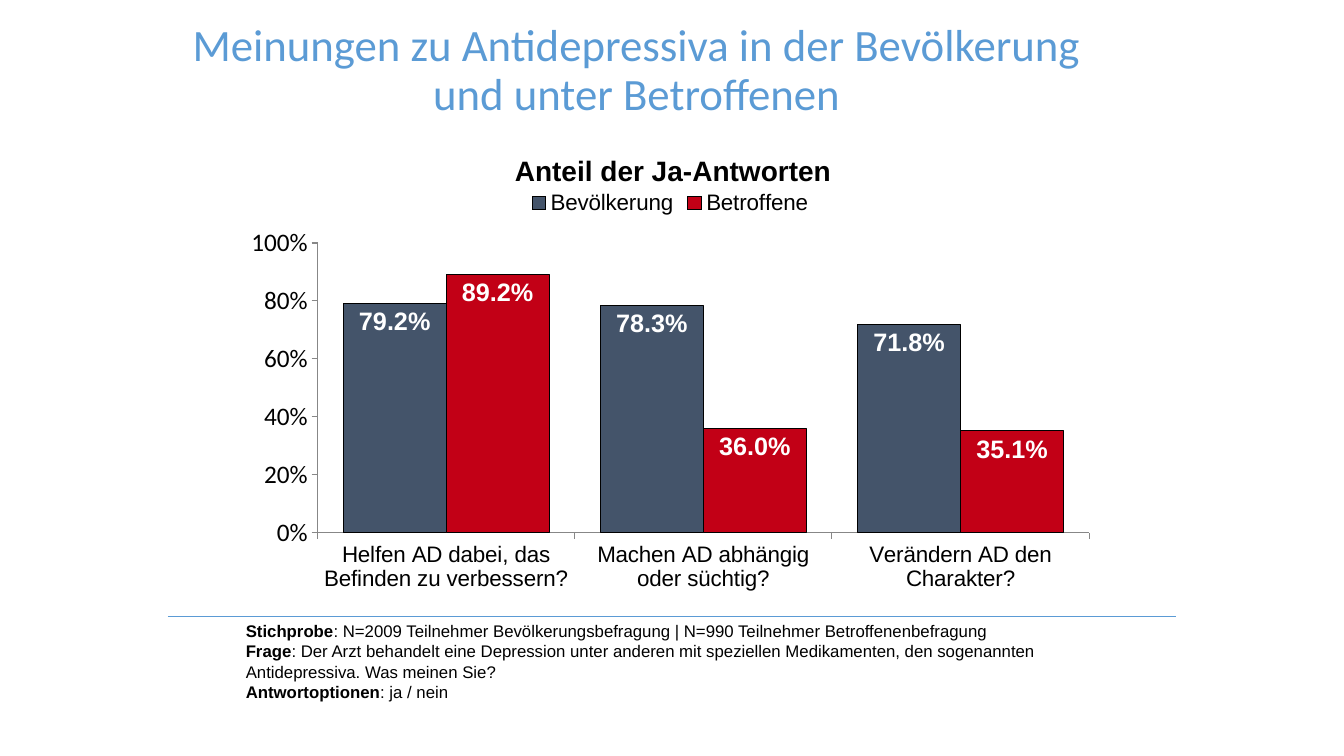
from lxml import etree
from pptx import Presentation
from pptx.chart.data import CategoryChartData
from pptx.dml.color import RGBColor
from pptx.enum.chart import (XL_CHART_TYPE, XL_LABEL_POSITION,
                             XL_LEGEND_POSITION, XL_TICK_MARK)
from pptx.enum.shapes import MSO_CONNECTOR
from pptx.enum.text import PP_ALIGN
from pptx.oxml import parse_xml
from pptx.oxml.ns import nsdecls, qn
from pptx.util import Pt

COLORS = {
    "accent": "5B9BD5",
    "text": "000000",
    "label": "FFFFFF",
    "axis": "878787",
    "population": "44546A",
    "patients": "C20016",
}
CATEGORIES = [
    "Helfen AD dabei, das Befinden zu verbessern?",
    "Machen AD abhängig oder süchtig?",
    "Verändern AD den Charakter?",
]
SERIES = [
    ("Bevölkerung", "population", (0.792, 0.783, 0.718)),
    ("Betroffene", "patients", (0.892, 0.36, 0.351)),
]
NOTES = [
    ("Stichprobe", ": N=2009 Teilnehmer Bevölkerungsbefragung | "
                   "N=990 Teilnehmer Betroffenenbefragung"),
    ("Frage", ": Der Arzt behandelt eine Depression unter anderen mit speziellen "
              "Medikamenten, den sogenannten Antidepressiva. Was meinen Sie?"),
    ("Antwortoptionen", ": ja / nein"),
]
# Inner plot area as fractions of the chart box
PLOT_AREA = {"x": 0.096, "y": 0.152, "w": 0.884, "h": 0.69}


def color(name):
    return RGBColor.from_string(COLORS[name])


def set_font(font, name, size, color_name="text", bold=False):
    font.name = name
    font.size = Pt(size)
    font.bold = bold
    font.color.rgb = color(color_name)


def add_text_frame(slide, left, top, width, height):
    box = slide.shapes.add_textbox(Pt(left), Pt(top), Pt(width), Pt(height))
    box.text_frame.word_wrap = True
    return box.text_frame


def add_heading(slide, left, top, width, height, text, font_name, size,
                color_name="text", bold=False, line_spacing=1.0):
    paragraph = add_text_frame(slide, left, top, width, height).paragraphs[0]
    paragraph.text = text
    paragraph.alignment = PP_ALIGN.CENTER
    paragraph.line_spacing = line_spacing
    set_font(paragraph.font, font_name, size, color_name, bold)


def format_axis(axis, font_name, size):
    axis.has_major_gridlines = False
    axis.major_tick_mark = XL_TICK_MARK.OUTSIDE
    axis.minor_tick_mark = XL_TICK_MARK.NONE
    axis.format.line.color.rgb = color("axis")
    axis.format.line.width = Pt(0.75)
    set_font(axis.tick_labels.font, font_name, size)


def fix_plot_area(chart):
    plot_area = chart.plots[0]._element.getparent()
    for layout in plot_area.findall(qn("c:layout")):
        plot_area.remove(layout)
    layout = parse_xml(f"<c:layout {nsdecls('c')}><c:manualLayout/></c:layout>")
    settings = {"layoutTarget": "inner", "xMode": "edge", "yMode": "edge", **PLOT_AREA}
    for tag, value in settings.items():
        etree.SubElement(layout[0], qn(f"c:{tag}")).set("val", str(value))
    plot_area.insert(0, layout)


def add_answer_chart(slide, left, top, width, height):
    data = CategoryChartData(number_format="0.0%")
    data.categories = CATEGORIES
    for name, _, values in SERIES:
        data.add_series(name, values)
    chart = slide.shapes.add_chart(XL_CHART_TYPE.COLUMN_CLUSTERED, Pt(left), Pt(top),
                                   Pt(width), Pt(height), data).chart
    chart.has_title = False
    set_font(chart.font, "Calibri", 18)

    # Legend
    chart.has_legend = True
    chart.legend.position = XL_LEGEND_POSITION.TOP
    chart.legend.include_in_layout = False
    set_font(chart.legend.font, "Arial", 16)

    # Axes
    format_axis(chart.category_axis, "Arial", 16)
    value_axis = chart.value_axis
    format_axis(value_axis, "Calibri", 18)
    value_axis.minimum_scale = 0
    value_axis.maximum_scale = 1
    value_axis.major_unit = 0.2
    value_axis.tick_labels.number_format = "0%"
    value_axis.tick_labels.number_format_is_linked = False

    # Columns and their labels
    plot = chart.plots[0]
    plot.vary_by_categories = False
    plot.gap_width = 50
    plot.overlap = 0
    for series, (_, color_name, _) in zip(plot.series, SERIES):
        series.format.fill.solid()
        series.format.fill.fore_color.rgb = color(color_name)
        series.format.line.color.rgb = color("text")
        series.format.line.width = Pt(0.75)
        labels = series.data_labels
        labels.show_value = True
        labels.position = XL_LABEL_POSITION.INSIDE_END
        labels.number_format = "0.0%"
        labels.number_format_is_linked = False
        set_font(labels.font, "Arial", 18, "label", bold=True)
    fix_plot_area(chart)


def add_divider(slide, left, top, width):
    line = slide.shapes.add_connector(MSO_CONNECTOR.STRAIGHT, Pt(left), Pt(top),
                                      Pt(left + width), Pt(top))
    line.line.color.rgb = color("accent")
    line.line.width = Pt(0.5)
    etree.SubElement(line._element.spPr, qn("a:effectLst"))


def add_survey_notes(slide, left, top, width, height):
    text_frame = add_text_frame(slide, left, top, width, height)
    for index, (term, explanation) in enumerate(NOTES):
        paragraph = text_frame.add_paragraph() if index else text_frame.paragraphs[0]
        set_font(paragraph.font, "Arial", 12)
        term_run = paragraph.add_run()
        term_run.text = term
        term_run.font.bold = True
        paragraph.add_run().text = explanation


def main():
    presentation = Presentation()
    presentation.slide_width = Pt(960)
    presentation.slide_height = Pt(540)
    slide = presentation.slides.add_slide(presentation.slide_layouts[6])

    # Title
    add_heading(slide, 120, 13, 669.6, 62.6,
                "Meinungen zu Antidepressiva in der Bevölkerung und unter Betroffenen",
                "Calibri", 32, "accent", line_spacing=0.9)
    # Chart with its heading
    add_answer_chart(slide, 167, 128, 623.5, 300)
    add_heading(slide, 169, 106, 623.5, 31.5, "Anteil der Ja-Antworten",
                "Arial", 20, bold=True)
    # Survey details
    add_survey_notes(slide, 168.5, 440, 623.5, 65.5)
    add_divider(slide, 120, 440, 720)

    presentation.save("out.pptx")


if __name__ == "__main__":
    main()
